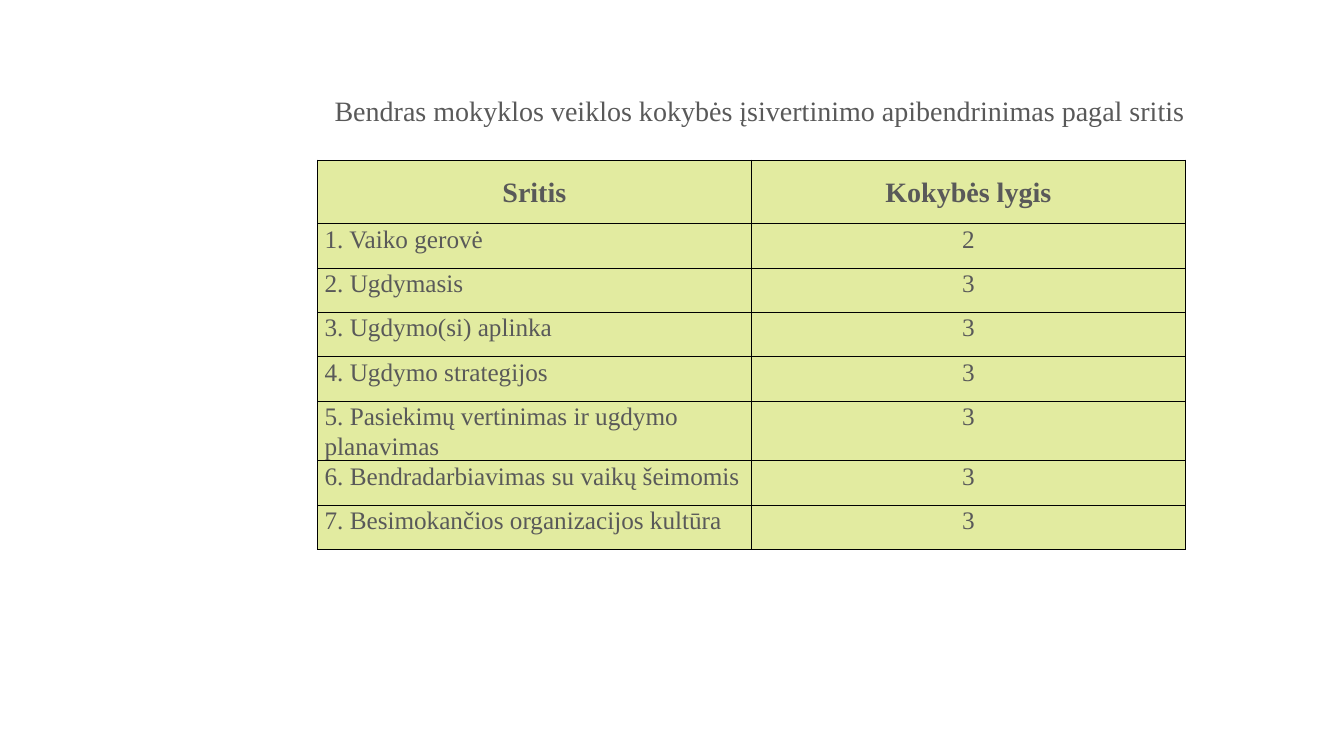
from pptx import Presentation
from pptx.dml.color import RGBColor
from pptx.enum.text import MSO_ANCHOR, PP_ALIGN
from pptx.oxml import parse_xml
from pptx.oxml.ns import nsdecls
from pptx.util import Inches, Pt

COLORS = {"text": "595959", "cell": "E2EBA0", "border": "000000"}
FONT_NAME = "Times New Roman"
TITLE = "Bendras mokyklos veiklos kokybės įsivertinimo apibendrinimas pagal sritis"
HEADERS = ("Sritis", "Kokybės lygis")
AREAS = [
    ("1. Vaiko gerovė", 2),
    ("2. Ugdymasis", 3),
    ("3. Ugdymo(si) aplinka", 3),
    ("4. Ugdymo strategijos", 3),
    ("5. Pasiekimų vertinimas ir ugdymo planavimas", 3),
    ("6. Bendradarbiavimas su vaikų šeimomis", 3),
    ("7. Besimokančios organizacijos kultūra", 3),
]
COLUMN_WIDTHS = (4.3, 4.31)
HEADER_HEIGHT, ROW_HEIGHT = 0.63, 0.44


def set_attributes(target, values):
    for name, value in values.items():
        setattr(target, name, value)


def format_paragraph(paragraph, text, size, alignment, line_spacing, bold=False):
    paragraph.text = text
    set_attributes(paragraph, {"alignment": alignment, "line_spacing": line_spacing})
    set_attributes(paragraph.font, {"name": FONT_NAME, "size": Pt(size), "bold": bold})
    paragraph.font.color.rgb = RGBColor.from_string(COLORS["text"])


def add_title(slide):
    title = slide.shapes.title
    set_attributes(title, {"left": Inches(2.41), "top": Inches(0.33),
                           "width": Inches(10.25), "height": Inches(1.31)})
    set_attributes(title.text_frame, {"word_wrap": True,
                                      "vertical_anchor": MSO_ANCHOR.BOTTOM,
                                      "margin_bottom": Inches(0.37)})
    format_paragraph(title.text_frame.paragraphs[0], TITLE, 20, PP_ALIGN.CENTER, 0.9)


def add_borders(cell):
    properties = cell._tc.get_or_add_tcPr()
    for position, side in enumerate(("lnL", "lnR", "lnT", "lnB")):
        properties.insert(position, parse_xml(
            f'<a:{side} {nsdecls("a")} w="{Pt(1)}"><a:solidFill>'
            f'<a:srgbClr val="{COLORS["border"]}"/></a:solidFill></a:{side}>'))


def fill_cell(cell, text, is_header, alignment):
    set_attributes(cell, {
        "margin_left": Inches(0.07), "margin_right": Inches(0.07),
        "margin_top": 0, "margin_bottom": 0,
        "vertical_anchor": MSO_ANCHOR.MIDDLE if is_header else MSO_ANCHOR.TOP})
    cell.fill.solid()
    cell.fill.fore_color.rgb = RGBColor.from_string(COLORS["cell"])
    add_borders(cell)
    format_paragraph(cell.text_frame.paragraphs[0], text,
                     20 if is_header else 18, alignment, 1.07, is_header)


def add_quality_table(slide):
    rows = [HEADERS, *AREAS]
    height = HEADER_HEIGHT + ROW_HEIGHT * len(AREAS)
    table = slide.shapes.add_table(
        len(rows), len(HEADERS), Inches(3.15), Inches(1.59),
        Inches(sum(COLUMN_WIDTHS)), Inches(height)).table
    for column, width in zip(table.columns, COLUMN_WIDTHS):
        column.width = Inches(width)
    for row_index, values in enumerate(rows):
        is_header = row_index == 0
        table.rows[row_index].height = Inches(HEADER_HEIGHT if is_header else ROW_HEIGHT)
        for column_index, value in enumerate(values):
            is_area_name = column_index == 0 and not is_header
            alignment = PP_ALIGN.LEFT if is_area_name else PP_ALIGN.CENTER
            fill_cell(table.cell(row_index, column_index), str(value), is_header, alignment)


def main():
    presentation = Presentation()
    set_attributes(presentation, {"slide_width": Inches(13.33),
                                  "slide_height": Inches(7.5)})
    # Title Only layout
    slide = presentation.slides.add_slide(presentation.slide_layouts[5])
    add_title(slide)
    add_quality_table(slide)
    presentation.save("out.pptx")


if __name__ == "__main__":
    main()
